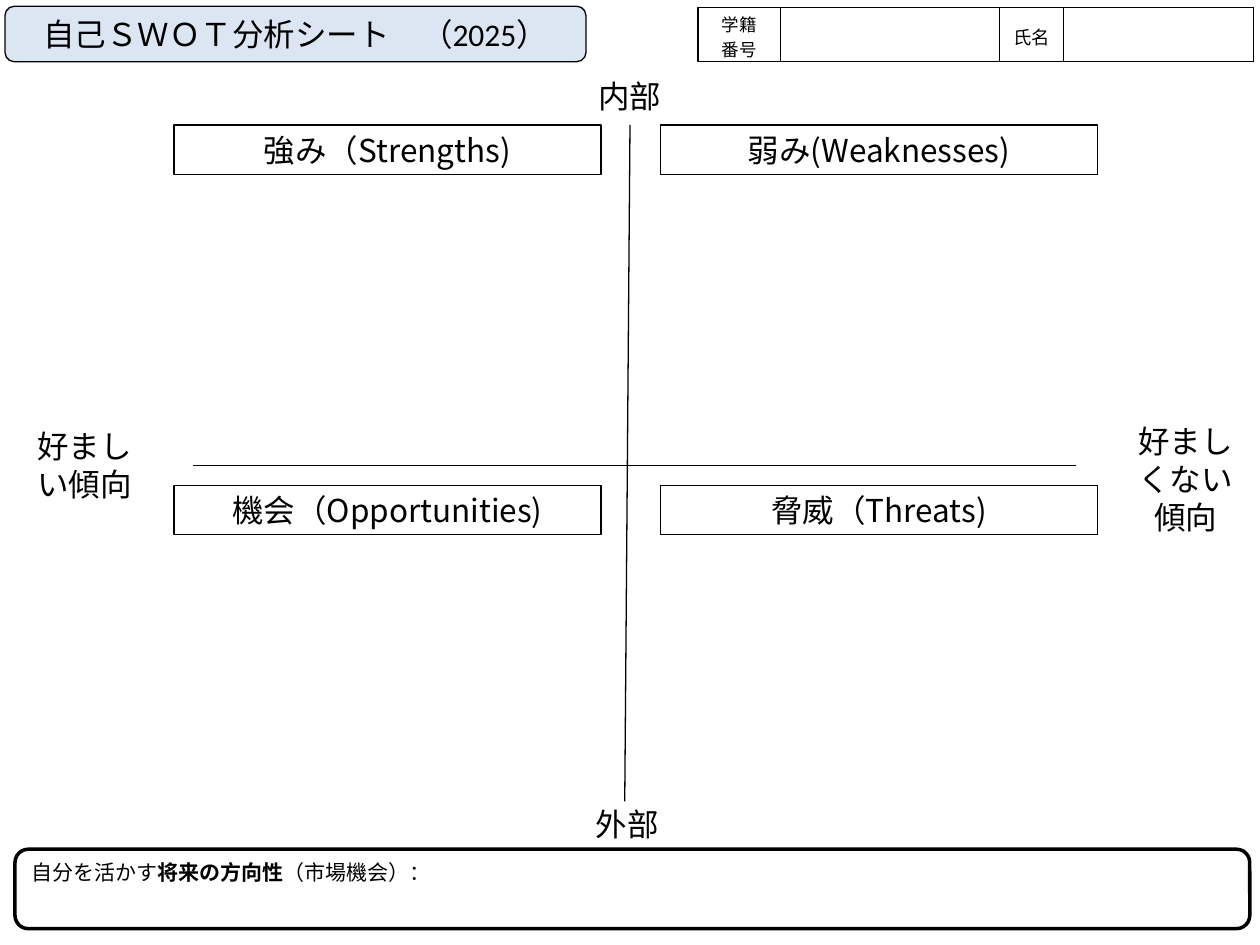
import pptx
import pptx.util
import pptx.dml.color
import pptx.enum.shapes
import pptx.enum.text
import pptx.oxml
import pptx.oxml.ns
from lxml import etree

Pt = pptx.util.Pt
SHAPE = pptx.enum.shapes.MSO_SHAPE
ANCHOR = pptx.enum.text.MSO_ANCHOR
ALIGN = pptx.enum.text.PP_ALIGN
qn = pptx.oxml.ns.qn
BLACK, WHITE, PALE_BLUE = "000000", "FFFFFF", "DCE6F2"
LATIN, CJK = "Calibri", "Noto Sans CJK JP"

# Content: a run is (text, font, bold)
TITLE = [("自己ＳＷＯＴ分析シート　（2025）", LATIN, False)]
QUADRANTS = [
    [[("強み", LATIN, False), ("（Strengths)", CJK, False)],
     [("弱み(Weaknesses)", CJK, False)]],
    [[("機会（Opportunities)", CJK, False)],
     [("脅威（Threats)", CJK, False)]],
]
QUADRANT_COLUMNS = [(99.4, 244), (377.3, 250)]  # left, width
QUADRANT_TOPS = [71.4, 277.3]
AXES = [(110.2, 266.2, 614.9, 266.2), (360, 71.4, 357, 458)]
AXIS_LABELS = [  # text, left, top, width, height
    ("内部", 314.6, 40.3, 90.7, 29),
    ("外部", 313.2, 456.5, 90.7, 29),
    ("好ましくない傾向", 635, 237.6, 85, 50.4),
    ("好ましい傾向", 5.8, 240.5, 85, 50.4),
]
STUDENT_CELLS = [  # lines, size, column width
    (["学籍", "番号"], 10, 47), ([], 10, 125.3),
    (["氏名"], 10.5, 36.5), ([], 10, 108.7),
]
DIRECTION = [("自分を活かす", LATIN, False), ("将来の方向性", LATIN, True),
             ("（市場機会）：", LATIN, False)]


def color(value):
    return pptx.dml.color.RGBColor.from_string(value)


def add_runs(paragraph, runs, size, align=ALIGN.CENTER):
    paragraph.alignment = align
    for text, font, bold in runs:
        run = paragraph.add_run()
        run.text = text
        run.font.name, run.font.size, run.font.bold = font, Pt(size), bold
        run.font.color.rgb = color(BLACK)


def add_box(kind, box, fill=None, line=0.75):
    shape = slide.shapes.add_shape(kind, *map(Pt, box))
    shape.shadow.inherit = False
    if fill:
        shape.fill.solid()
        shape.fill.fore_color.rgb = color(fill)
    else:
        shape.fill.background()
    shape.line.color.rgb = color(BLACK)
    shape.line.width = Pt(line)
    return shape


def add_heading(kind, box, fill, runs):
    frame = add_box(kind, box, fill).text_frame
    frame.word_wrap = False
    frame.vertical_anchor = ANCHOR.MIDDLE
    add_runs(frame.paragraphs[0], runs, 18)


def add_border(cell):
    properties = cell._tc.get_or_add_tcPr()
    for position, side in enumerate(("lnL", "lnR", "lnT", "lnB")):
        border = etree.Element(qn("a:" + side), w=str(Pt(1)))
        fill = etree.SubElement(border, qn("a:solidFill"))
        etree.SubElement(fill, qn("a:srgbClr"), val=BLACK)
        properties.insert(position, border)


deck = pptx.Presentation()
deck.slide_width, deck.slide_height = Pt(720), Pt(540)
slide = deck.slides.add_slide(deck.slide_layouts[6])

# Title
add_heading(SHAPE.ROUNDED_RECTANGLE, (2.9, 3.6, 332, 31.7), PALE_BLUE, TITLE)

# Axes
for ends in AXES:
    axis = slide.shapes.add_connector(
        pptx.enum.shapes.MSO_CONNECTOR.STRAIGHT, *map(Pt, ends))
    axis.line.color.rgb = color(BLACK)
    axis.line.width = Pt(0.75)
    etree.SubElement(axis._element.spPr, qn("a:effectLst"))

# Quadrant headings
for top, row in zip(QUADRANT_TOPS, QUADRANTS):
    for (left, width), runs in zip(QUADRANT_COLUMNS, row):
        add_heading(SHAPE.RECTANGLE, (left, top, width, 28.3), WHITE, runs)

# Axis labels
for text, *box in AXIS_LABELS:
    label = slide.shapes.add_textbox(*map(Pt, box)).text_frame
    label.word_wrap = True
    add_runs(label.paragraphs[0], [(text, LATIN, False)], 18)

# Student number and name
student = slide.shapes.add_table(
    1, len(STUDENT_CELLS), Pt(398.9), Pt(4.2),
    Pt(sum(width for *_, width in STUDENT_CELLS)), Pt(31)).table
student.first_row = student.horz_banding = False
student.rows[0].height = Pt(31)
for index, (lines, size, width) in enumerate(STUDENT_CELLS):
    student.columns[index].width = Pt(width)
    cell = student.cell(0, index)
    cell.vertical_anchor = ANCHOR.MIDDLE
    cell.margin_top, cell.margin_bottom = Pt(2), Pt(0)
    cell.fill.solid()
    cell.fill.fore_color.rgb = color(WHITE)
    add_border(cell)
    for number, line in enumerate(lines):
        frame = cell.text_frame
        paragraph = frame.add_paragraph() if number else frame.paragraphs[0]
        add_runs(paragraph, [(line, LATIN, False)], size)

# Future direction
direction = add_box(SHAPE.ROUNDED_RECTANGLE, (8.6, 485.3, 705.6, 45.4), line=2)
direction.text_frame.word_wrap = True
direction.text_frame.vertical_anchor = ANCHOR.TOP
add_runs(direction.text_frame.paragraphs[0], DIRECTION, 12, ALIGN.LEFT)

deck.save("out.pptx")
